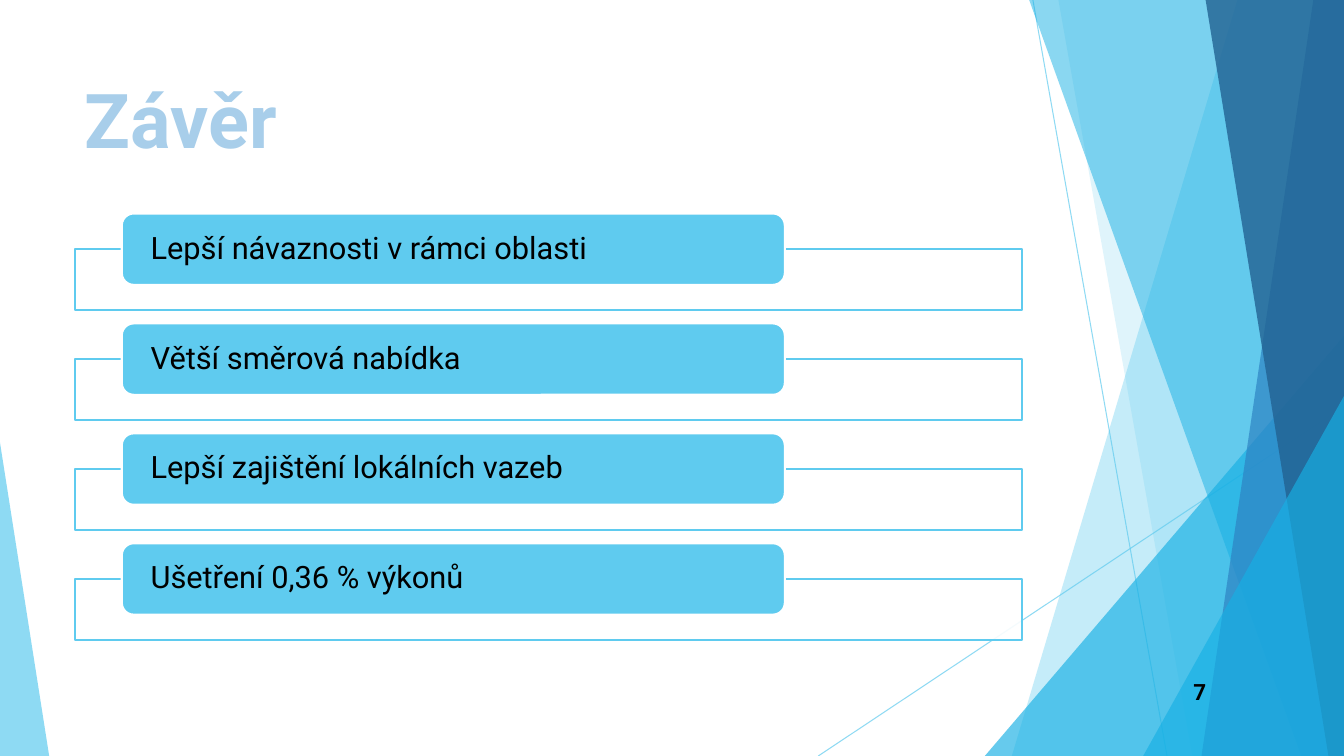
from dataclasses import dataclass

from lxml.etree import SubElement
from pptx import Presentation
from pptx.dml.color import RGBColor
from pptx.enum.shapes import MSO_CONNECTOR, MSO_SHAPE
from pptx.enum.text import MSO_ANCHOR, MSO_AUTO_SIZE, PP_ALIGN
from pptx.oxml.ns import qn
from pptx.shapes.autoshape import Shape
from pptx.slide import Slide
from pptx.text.text import TextFrame
from pptx.util import Cm, Pt

WIDTH, HEIGHT = 33.87, 19.05
BLEED_TOP = -0.02


@dataclass(frozen=True)
class Theme:
    font: str = "Roboto"
    sky: str = "5FCBEF"
    cyan: str = "17B0E4"
    blue: str = "2E83C3"
    navy: str = "226292"
    heading: str = "A8CEEA"
    white: str = "FFFFFF"
    black: str = "000000"
    title_size: int = 54
    point_size: int = 22
    number_size: int = 16
    hairline: float = 0.75
    outline: float = 1.5


THEME = Theme()


@dataclass(frozen=True)
class Ray:
    x1: float
    y1: float
    x2: float
    y2: float


@dataclass(frozen=True)
class Facet:
    top_x: float
    bottom_x: float
    color: str
    opacity: int


@dataclass(frozen=True)
class Corner:
    left: float
    top: float
    width: float
    apex: float
    color: str
    opacity: int


@dataclass(frozen=True)
class Box:
    left: float
    top: float
    width: float
    height: float

    def emu(self, down: float = 0) -> tuple:
        return Cm(self.left), Cm(self.top + down), Cm(self.width), Cm(self.height)


RAYS = (Ray(26.03, 0, 29.41, HEIGHT), Ray(WIDTH, 10.24, 20.62, HEIGHT))
BACKDROP = (
    Facet(31.19, 25.5, THEME.sky, 36),
    Facet(26.67, 30.05, THEME.sky, 20),
    Corner(24.82, 8.46, 9.05, 1, THEME.cyan, 66),
    Facet(25.93, 32.79, THEME.cyan, 50),
    Facet(33.1, 30.28, THEME.blue, 70),
    Facet(30.38, 33.48, THEME.navy, 80),
    Corner(28.81, 9.98, 5.06, 1, THEME.cyan, 66),
    Corner(0, 11.15, 1.24, 0, THEME.sky, 70),
)
HEADING = Box(1.88, 1.7, 23.88, 3.66)
FRAME = Box(1.88, 6.27, 23.88, 1.55)
TAB = Box(3.07, 5.38, 16.71, 1.8)
PAGE_NUMBER = Box(28.75, 16.92, 1.9, 1.02)
POINT_PITCH = 2.77
POINTS = (
    "Lepší návaznosti v rámci oblasti",
    "Větší směrová nabídka",
    "Lepší zajištění lokálních vazeb",
    "Ušetření 0,36 % výkonů",
)


def set_opacity(color_parent, percent: int) -> None:
    color = next(color_parent.iter(qn("a:srgbClr")))
    SubElement(color, qn("a:alpha"), val=str(percent * 1000))


def paint(shape: Shape, fill: str, opacity: int = 100, line: str = "") -> None:
    shape.shadow.inherit = False
    shape.fill.solid()
    shape.fill.fore_color.rgb = RGBColor.from_string(fill)
    if opacity < 100:
        set_opacity(shape.fill._xPr.find(qn("a:solidFill")), opacity)
    if line:
        shape.line.color.rgb = RGBColor.from_string(line)
        shape.line.width = Pt(THEME.outline)
    else:
        shape.line.fill.background()


def write(frame: TextFrame, text: str, size: int, color: str, bold: bool,
          align: PP_ALIGN, anchor: MSO_ANCHOR) -> None:
    frame.text = text
    frame.word_wrap = True
    frame.auto_size = MSO_AUTO_SIZE.NONE
    frame.vertical_anchor = anchor
    paragraph = frame.paragraphs[0]
    paragraph.alignment = align
    paragraph.font.name = THEME.font
    paragraph.font.size = Pt(size)
    paragraph.font.bold = bold
    paragraph.font.color.rgb = RGBColor.from_string(color)


def draw_ray(slide: Slide, ray: Ray) -> None:
    line = slide.shapes.add_connector(
        MSO_CONNECTOR.STRAIGHT, Cm(ray.x1), Cm(ray.y1), Cm(ray.x2), Cm(ray.y2))
    line.line.color.rgb = RGBColor.from_string(THEME.sky)
    line.line.width = Pt(THEME.hairline)
    properties = line._element.spPr
    set_opacity(properties, 70)
    SubElement(properties, qn("a:effectLst"))


def draw_facet(slide: Slide, facet: Facet) -> None:
    outline = slide.shapes.build_freeform(Cm(facet.top_x), Cm(BLEED_TOP))
    outline.add_line_segments([
        (Cm(WIDTH), Cm(BLEED_TOP)),
        (Cm(WIDTH), Cm(HEIGHT)),
        (Cm(facet.bottom_x), Cm(HEIGHT)),
    ], close=True)
    paint(outline.convert_to_shape(), facet.color, facet.opacity)


def draw_corner(slide: Slide, corner: Corner) -> None:
    area = Box(corner.left, corner.top, corner.width, HEIGHT - corner.top)
    triangle = slide.shapes.add_shape(MSO_SHAPE.ISOSCELES_TRIANGLE, *area.emu())
    triangle.adjustments[0] = corner.apex
    paint(triangle, corner.color, corner.opacity)


def draw_point(slide: Slide, text: str, down: float) -> None:
    frame = slide.shapes.add_shape(MSO_SHAPE.RECTANGLE, *FRAME.emu(down))
    paint(frame, THEME.white, 90, THEME.sky)
    tab = slide.shapes.add_shape(MSO_SHAPE.ROUNDED_RECTANGLE, *TAB.emu(down))
    paint(tab, THEME.sky, line=THEME.white)
    label = tab.text_frame
    write(label, text, THEME.point_size, THEME.black, False,
          PP_ALIGN.LEFT, MSO_ANCHOR.MIDDLE)
    label.margin_left = label.margin_right = Cm(0.64)
    label.margin_top = label.margin_bottom = 0
    label.paragraphs[0].line_spacing = 0.9


def main() -> None:
    deck = Presentation()
    deck.slide_width, deck.slide_height = Cm(WIDTH), Cm(HEIGHT)
    slide = deck.slides.add_slide(deck.slide_layouts[5])

    for ray in RAYS:
        draw_ray(slide, ray)
    for piece in BACKDROP:
        if isinstance(piece, Facet):
            draw_facet(slide, piece)
        else:
            draw_corner(slide, piece)

    heading = slide.shapes.title
    heading.left, heading.top, heading.width, heading.height = HEADING.emu()
    write(heading.text_frame, "Závěr", THEME.title_size, THEME.heading, True,
          PP_ALIGN.LEFT, MSO_ANCHOR.TOP)

    for index, text in enumerate(POINTS):
        draw_point(slide, text, index * POINT_PITCH)

    page_number = slide.shapes.add_textbox(*PAGE_NUMBER.emu())
    write(page_number.text_frame, "7", THEME.number_size, THEME.black, True,
          PP_ALIGN.RIGHT, MSO_ANCHOR.MIDDLE)

    deck.save("out.pptx")


if __name__ == "__main__":
    main()
